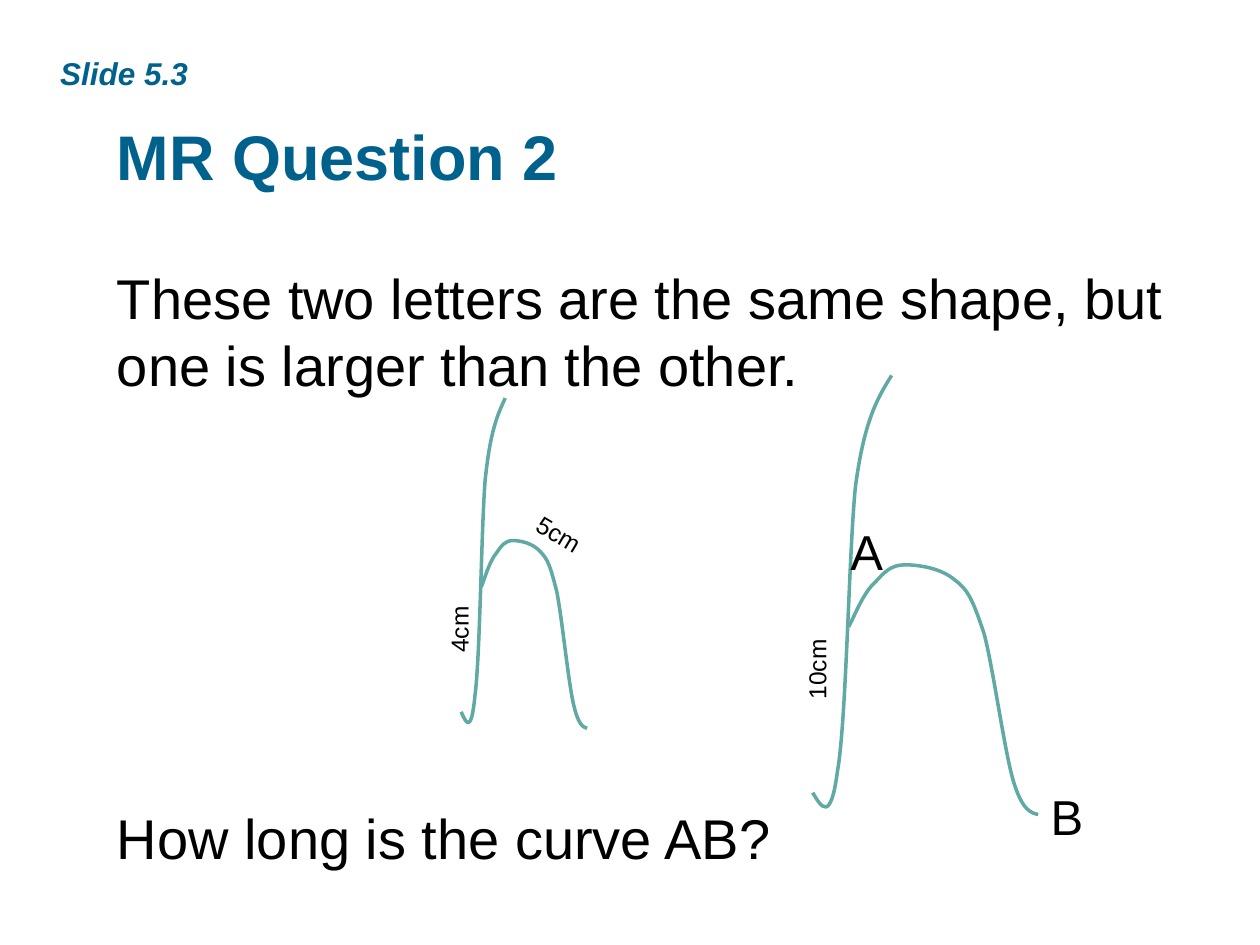
"""Build the slide asking for a curve length on two similar letters."""
import lxml.etree
import pptx
import pptx.dml.color
import pptx.enum.text
import pptx.oxml.ns
import pptx.util

Inches, Pt, qn = pptx.util.Inches, pptx.util.Pt, pptx.oxml.ns.qn
RGB = pptx.dml.color.RGBColor.from_string
ANCHOR = pptx.enum.text.MSO_ANCHOR

THEME = {
    "font": "Arial",
    "heading": "00628C", "ink": "000000", "stroke": "60AAA3",
    "title": 36, "body": 32, "point": 28, "tag": 18, "measure": 14,
    "stroke_width": 2,
}

HEADING = {"bold": True}
TAG = {"bold": True, "italic": True}
MEASURE = {"line_spacing": 1.15, "space_after": Pt(10)}

TITLE = ("MR Question 2", (0.83, 0.33, 8.67, 1.25))
SLIDE_TAG = ("Slide 5.3", (0.38, 0.38, 1.23, 0.4))
BODY_BOX = (0.83, 2, 8.66, 5.14)
BODY = [
    ("These two letters are the same shape, but one is larger than the other.", 0),
    ("How long is the curve AB?", 232),
]
POINTS = [("A", (6.65, 4.09, 0.53, 0.57)), ("B", (8.24, 6.19, 0.53, 0.57))]

LETTER_ORIGIN = (3.66, 3.16)
STEM = [
    (4.01, 3.16), (3.95, 3.29), (3.89, 3.42), (3.85, 3.82),
    (3.82, 4.21), (3.81, 5.22), (3.77, 5.52),
    (3.74, 5.83), (3.7, 5.74), (3.66, 5.65),
]
ARCH = [
    (3.82, 4.66), (3.86, 4.55), (3.89, 4.45), (3.94, 4.39),
    (3.98, 4.33), (4.01, 4.29), (4.07, 4.29),
    (4.13, 4.29), (4.23, 4.31), (4.29, 4.38),
    (4.35, 4.44), (4.37, 4.5), (4.42, 4.7),
    (4.46, 4.9), (4.51, 5.4), (4.55, 5.58),
    (4.59, 5.76), (4.63, 5.77), (4.66, 5.78),
]
LETTERS = [
    {"origin": (3.66, 3.16), "scale": (1, 1), "measures": [
        ("4cm", (3.44, 3.91, 0.42, 1.37), "vert270", 0),
        ("5cm", (4.3, 3.92, 0.57, 1.01), "vert", 300.8)]},
    {"origin": (6.45, 2.98), "scale": (1.79, 1.33), "measures": [
        ("10cm", (6.28, 4.28, 0.42, 1.37), "vert270", 0)]},
]


def apply(target, values):
    """Set every attribute in values on target."""
    for name, value in values.items():
        setattr(target, name, value)


def write(p, text, size, color="ink", font=None, para=None):
    """Fill a paragraph with one formatted run."""
    apply(p, para or {})
    r = p.add_run()
    r.text = text
    apply(r.font, {"name": THEME["font"], "size": Pt(THEME[size]), **(font or {})})
    r.font.color.rgb = RGB(THEME[color])


def add_box(shapes, box, **frame):
    """Add a wrapping text box and return it."""
    sp = shapes.add_textbox(*map(Inches, box))
    apply(sp.text_frame, {"word_wrap": True, **frame})
    return sp


def add_stroke(shapes, points, origin, scale):
    """Draw a chain of cubic curves, moved and scaled from the base letter."""
    start, *rest = [
        tuple(Inches(o + (v - base) * k)
              for v, base, o, k in zip(point, LETTER_ORIGIN, origin, scale))
        for point in points
    ]
    builder = shapes.build_freeform(*start, scale=1.0)
    builder.add_line_segments(rest, close=False)
    sp = builder.convert_to_shape()
    outline = sp._element.find(".//" + qn("a:path"))
    segments = outline.findall(qn("a:lnTo"))
    for i in range(0, len(segments), 3):
        curve = lxml.etree.SubElement(outline, qn("a:cubicBezTo"))
        for segment in segments[i:i + 3]:
            curve.append(segment[0])
            outline.remove(segment)
    sp.shadow.inherit = False
    sp.fill.background()
    sp.line.color.rgb = RGB(THEME["stroke"])
    sp.line.width = Pt(THEME["stroke_width"])


def add_letter(s, letter):
    """Add one letter with its measurements as a group."""
    shapes = s.shapes.add_group_shape().shapes
    for points in (STEM, ARCH):
        add_stroke(shapes, points, letter["origin"], letter["scale"])
    for text, box, direction, rotation in letter["measures"]:
        sp = add_box(shapes, box)
        sp.rotation = rotation
        sp.text_frame._txBody.bodyPr.set("vert", direction)
        write(sp.text_frame.paragraphs[0], text, "measure", para=MEASURE)


def main():
    """Assemble and save the slide."""
    prs = pptx.Presentation()
    apply(prs, {"slide_width": Inches(10), "slide_height": Inches(7.5)})
    s = prs.slides.add_slide(prs.slide_layouts[6])

    text, box = TITLE
    tf = add_box(s.shapes, box, vertical_anchor=ANCHOR.BOTTOM).text_frame
    write(tf.paragraphs[0], text, "title", "heading", HEADING)

    tf = add_box(s.shapes, BODY_BOX, margin_top=Inches(0.09)).text_frame
    for i, (text, gap) in enumerate(BODY):
        p = tf.add_paragraph() if i else tf.paragraphs[0]
        write(p, text, "body", para={"space_before": Pt(gap)})

    for letter in LETTERS:
        add_letter(s, letter)
    for text, box in POINTS:
        write(add_box(s.shapes, box).text_frame.paragraphs[0], text, "point")

    text, box = SLIDE_TAG
    tf = add_box(s.shapes, box, word_wrap=False).text_frame
    write(tf.paragraphs[0], text, "tag", "heading", TAG)

    prs.save("out.pptx")


if __name__ == "__main__":
    main()
